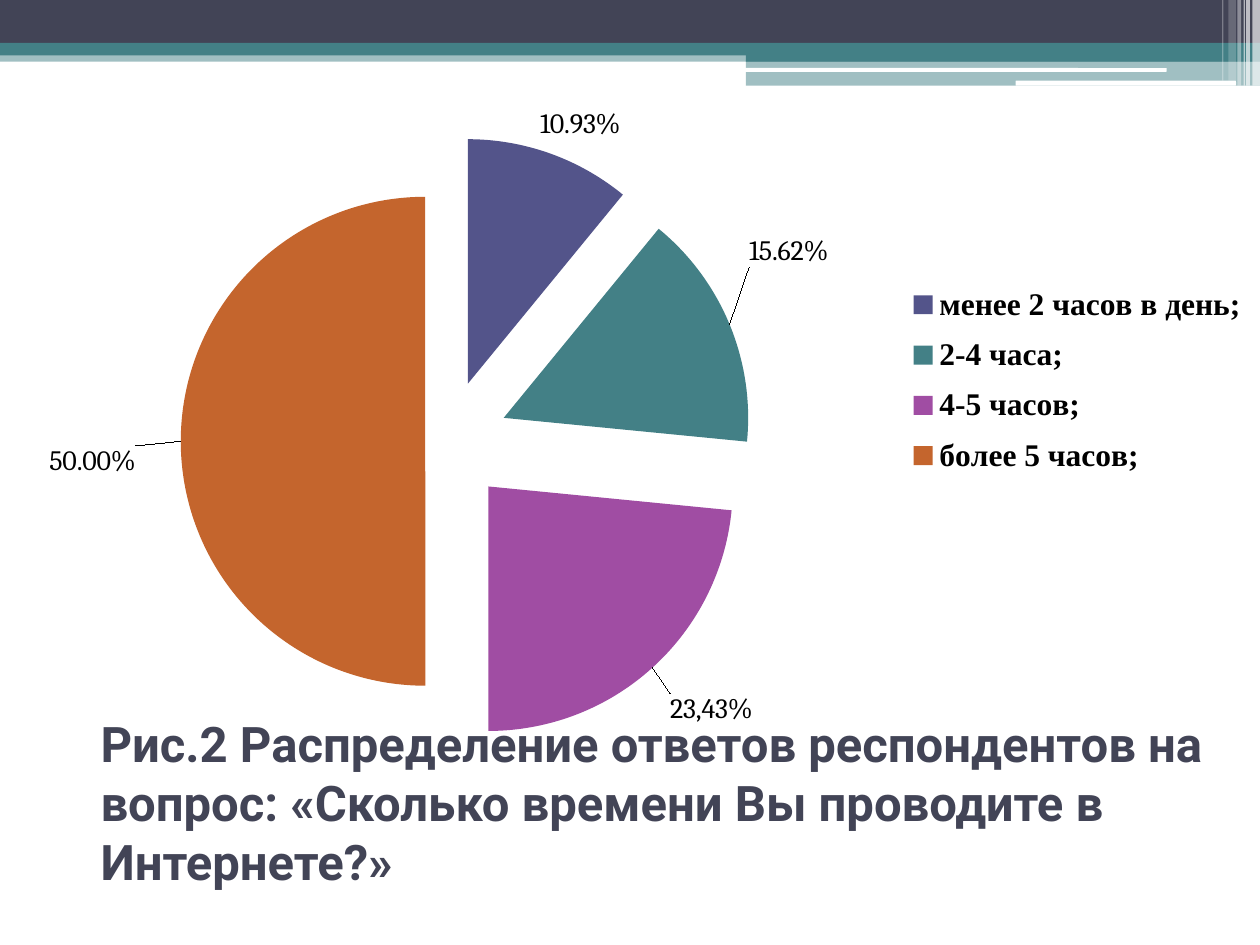
from lxml.etree import SubElement
from pptx import Presentation
from pptx.chart.data import CategoryChartData
from pptx.dml.color import RGBColor
from pptx.enum.chart import (XL_CHART_TYPE as Chart, XL_LABEL_POSITION as Label,
                             XL_LEGEND_POSITION as Side)
from pptx.enum.shapes import MSO_SHAPE as Shape
from pptx.enum.text import MSO_ANCHOR as Anchor
from pptx.oxml import parse_xml
from pptx.oxml.ns import nsdecls, qn
from pptx.util import Inches, Pt

NAVY = RGBColor(0x42, 0x44, 0x56)
TEAL = RGBColor(0x43, 0x80, 0x86)
INDIGO = RGBColor(0x53, 0x54, 0x8A)
PURPLE = RGBColor(0xA0, 0x4D, 0xA3)
ORANGE = RGBColor(0xC4, 0x65, 0x2D)
WHITE = RGBColor(0xFF, 0xFF, 0xFF)
BLACK = RGBColor(0, 0, 0)

# left, top, width, height, colour, opacity in percent
BANDS = [
    (0, 0.4, 10, 0.09, TEAL, 50),
    (0, 0, 10, 0.34, NAVY, 100),
    (0, 0.34, 10, 0.1, TEAL, 100),
    (5.92, 0.39, 4.08, 0.1, TEAL, 100),
    (5.92, 0.48, 4.08, 0.2, TEAL, 50),
]
SLOTS = [(5.91, 0.54, 3.35, 0.03), (8.06, 0.64, 1.75, 0.04)]
# left, width, height, opacity in percent
STRIPES = [
    (9.94, 0.06, 0.68, 65),
    (9.89, 0.03, 0.68, 65),
    (9.87, 0.01, 0.68, 60),
    (9.82, 0.03, 0.68, 40),
    (9.75, 0.06, 0.64, 20),
    (9.7, 0.01, 0.64, 30),
]
# answer, share, colour, explosion, label shift, label text
SLICES = [
    ("менее 2 часов в день;", 0.1093, INDIGO, 25, (-0.01, -0.01), None),
    ("2-4 часа;", 0.1562, TEAL, 25, (0.01, -0.08), None),
    ("4-5 часов;", 0.2343, PURPLE, 25, (0.01, 0.03), "23,43%"),
    ("более 5 часов;", 0.5, ORANGE, 9, (-0.03, 0.03), None),
]
TITLE = ("Рис.2 Распределение ответов респондентов на вопрос: "
         "«Сколько времени Вы проводите в Интернете?»")


def style(font, name="Cambria", size=16, color=BLACK, bold=False):
    font.name, font.size, font.bold = name, Pt(size), bold
    font.color.rgb = color


def write(frame, text, **form):
    run = frame.paragraphs[0].add_run()
    run.text = text
    style(run.font, **form)


def layout(x, y, w=None, h=None, inner=False):
    """Manual chart layout; edges for a box, a plain shift without a size."""
    parts = [("layoutTarget", "inner")] if inner else []
    if w:
        parts += [("xMode", "edge"), ("yMode", "edge")]
    parts += [("x", x), ("y", y)]
    if w:
        parts += [("w", w), ("h", h)]
    body = "".join(f'<c:{tag} val="{val}"/>' for tag, val in parts)
    return parse_xml(f'<c:layout {nsdecls("c")}><c:manualLayout>{body}'
                     '</c:manualLayout></c:layout>')


def place(after, box):
    """Put a layout after an element, in place of any layout already there."""
    old = after.getparent().find(qn("c:layout"))
    if old is not None:
        old.getparent().remove(old)
    after.addnext(box)


class Deck:
    def __init__(self):
        self.prs = Presentation()
        self.prs.slide_width, self.prs.slide_height = Inches(10), Inches(7.5)
        self.slide = self.prs.slides.add_slide(self.prs.slide_layouts[6])

    def bar(self, x, y, w, h, color, alpha=100, kind=Shape.RECTANGLE):
        bar = self.slide.shapes.add_shape(
            kind, Inches(x), Inches(y), Inches(w), Inches(h))
        bar.shadow.inherit = False
        bar.line.fill.background()
        bar.fill.solid()
        bar.fill.fore_color.rgb = color
        if alpha < 100:
            tint = bar._element.spPr.find(".//" + qn("a:srgbClr"))
            SubElement(tint, qn("a:alpha"), val=str(alpha * 1000))

    def text(self, x, y, w, h, text, **form):
        box = self.slide.shapes.add_textbox(
            Inches(x), Inches(y), Inches(w), Inches(h))
        frame = box.text_frame
        frame.word_wrap = True
        frame.vertical_anchor = Anchor.MIDDLE
        write(frame, text, **form)

    def pie(self, x, y, w, h, slices):
        data = CategoryChartData(number_format="0.00%")
        data.categories = [row[0] for row in slices]
        data.add_series("Series 1", [row[1] for row in slices])
        chart = self.slide.shapes.add_chart(
            Chart.PIE, Inches(x), Inches(y), Inches(w), Inches(h), data).chart
        chart.has_title = False
        style(chart.font, size=10)
        chart.has_legend = True
        legend = chart.legend
        legend.position = Side.RIGHT
        legend.include_in_layout = False
        style(legend.font, name="Times New Roman", size=18, bold=True)
        place(legend._element.find(qn("c:legendPos")),
              layout(0.72, 0.27, 0.27, 0.32))

        plot = chart.plots[0]
        plot.vary_by_categories = True
        area = plot._element.getparent()
        for old in area.findall(qn("c:layout")):
            area.remove(old)
        # The box holds the closed pie; exploded slices reach beyond it.
        area.insert(0, layout(0.16, 0.16, 0.39, 0.72, inner=True))

        series = plot.series[0]
        labels = series.data_labels
        labels.show_value = True
        labels.number_format = "0.00%"
        labels.number_format_is_linked = False
        labels.position = Label.OUTSIDE_END
        style(labels.font)
        for i, (_, _, color, gap, shift, text) in enumerate(slices):
            self.slice(series.points[i], color, gap, text)
            mark = labels._element.findall(qn("c:dLbl"))[i]
            place(mark.find(qn("c:idx")), layout(*shift))

    def slice(self, point, color, gap, text):
        fill = point.format.fill
        fill.solid()
        fill.fore_color.rgb = color
        point.format.line.fill.background()
        shape = point._element.findall(qn("c:dPt"))[-1].find(qn("c:spPr"))
        shape.addprevious(
            parse_xml(f'<c:explosion {nsdecls("c")} val="{gap}"/>'))
        label = point.data_label
        if text:
            write(label.text_frame, text)
        else:
            style(label.font)
        label.position = Label.OUTSIDE_END


def main():
    deck = Deck()
    for band in BANDS:
        deck.bar(*band)
    for slot in SLOTS:
        deck.bar(*slot, WHITE, kind=Shape.ROUNDED_RECTANGLE)
    for x, w, h, alpha in STRIPES:
        deck.bar(x, 0, w, h, WHITE, alpha)
    deck.text(0.7, 5.78, 9, 1.17, TITLE,
              name="Roboto", size=28, color=NAVY, bold=True)
    deck.pie(0, 0.7, 10, 5.39, SLICES)
    deck.prs.save("out.pptx")


if __name__ == "__main__":
    main()
